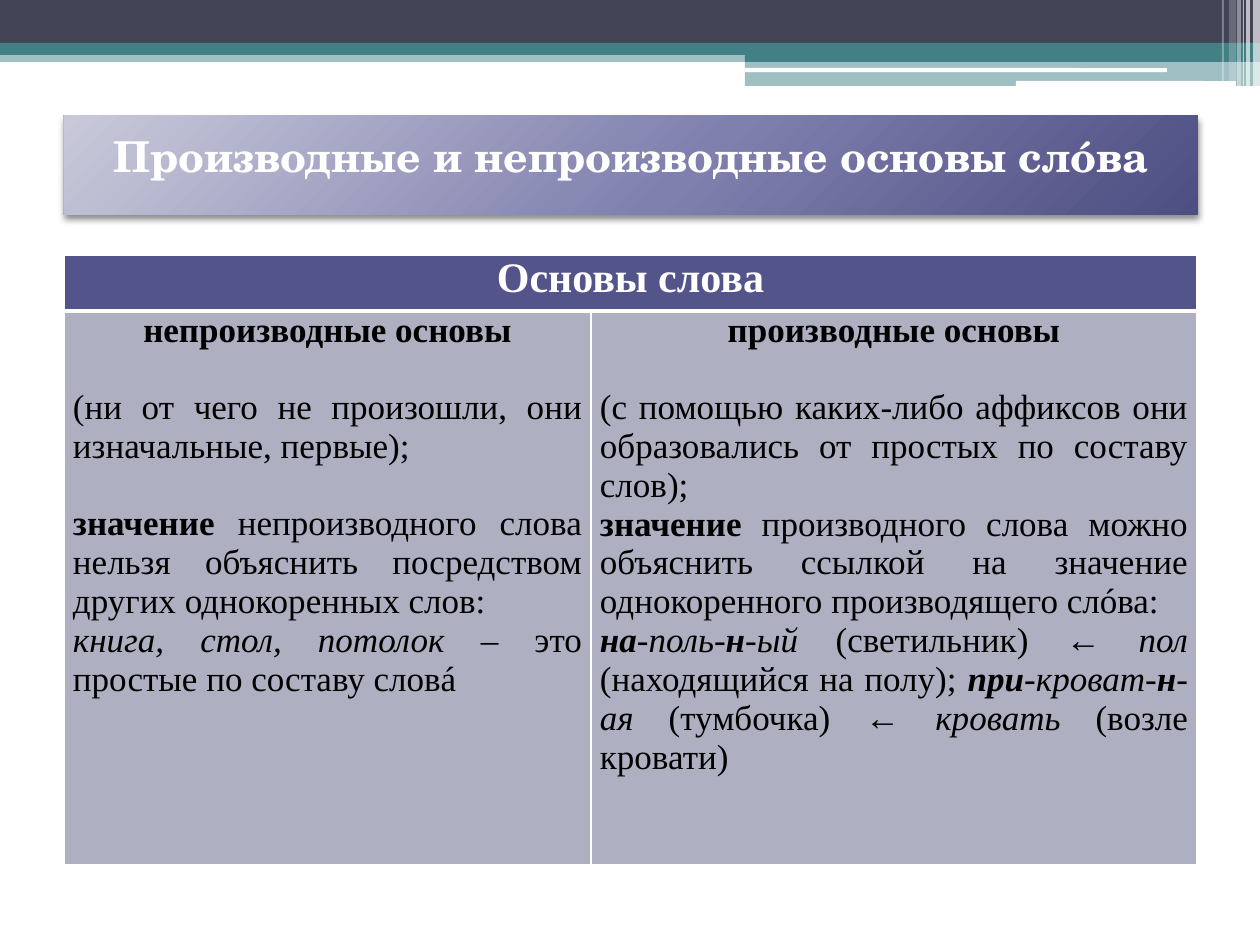
"""Builds a slide on derived and non-derived word stems."""
from dataclasses import dataclass

from lxml.etree import SubElement
from pptx import Presentation
from pptx.dml.color import RGBColor
from pptx.enum.shapes import MSO_SHAPE
from pptx.enum.text import MSO_ANCHOR, MSO_AUTO_SIZE, PP_ALIGN
from pptx.oxml import parse_xml
from pptx.oxml.ns import nsdecls, qn
from pptx.util import Pt

SCALE = 914400 / 126


@dataclass(frozen=True)
class Theme:
    dark: str = "424456"
    teal: str = "438086"
    white: str = "FFFFFF"
    black: str = "000000"
    header: str = "53548A"
    cell: str = "AEB0C1"
    title_stops: tuple = ((0, "C9C9DA"), (55, "7F80AE"), (100, "4D4E81"))
    title_font: str = "TeX Gyre Schola"
    text_font: str = "Times New Roman"
    title_size: float = 24.3
    header_size: int = 24
    text_size: int = 20
    blank_line: int = 22


THEME = Theme()
BANDS = [
    (0, 50, 1260, 12, THEME.teal, 50),
    (0, 0, 1260, 43, THEME.dark, 100),
    (0, 43, 1260, 12, THEME.teal, 100),
    (745, 49, 515, 13, THEME.teal, 100),
    (745, 61, 515, 25, THEME.teal, 50),
]
LINES = [(745, 68, 422, 4), (1016, 81, 220, 5)]
STRIPES = [
    (1253, 7, 86, 65), (1246, 4, 86, 65), (1243, 1, 86, 60),
    (1237, 4, 86, 40), (1229, 7, 81, 20), (1222, 2, 81, 30),
]
UNDERIVED = [
    ("center", True, [("непроизводные основы", "b")]),
    ("justify", True, [("(ни от чего не произошли, они изначальные, первые);", "")]),
    ("justify", False, [
        ("значение ", "b"),
        ("непроизводного слова нельзя объяснить посредством других однокоренных слов:", ""),
    ]),
    ("justify", False, [
        ("книга, стол, потолок", "i"), (" – это простые по составу словá", ""),
    ]),
]
DERIVED = [
    ("center", True, [("производные основы", "b")]),
    ("justify", False, [
        ("(с помощью каких-либо аффиксов они образовались от простых по составу слов);", ""),
    ]),
    ("justify", False, [
        ("значение", "b"),
        (" производного слова можно объяснить ссылкой на значение "
         "однокоренного производящего слóва:", ""),
    ]),
    ("justify", False, [
        ("на", "bi"), ("-поль-", "i"), ("н", "bi"), ("-ый ", "i"),
        ("(светильник) ← ", ""), ("пол ", "i"), ("(находящийся на полу); ", ""),
        ("при", "bi"), ("-кроват-", "i"), ("н", "bi"), ("-ая", "i"),
        (" (тумбочка) ← ", ""), ("кровать", "i"), (" (возле кровати)", ""),
    ]),
]


def px(length):
    """Turn pixels into EMU."""
    return round(length * SCALE)


def apply(target, values):
    """Set each named attribute on the target."""
    for name, value in values.items():
        setattr(target, name, value)


class SlideBuilder:
    """Holds the theme and the current page."""

    def __init__(self, page, theme):
        """Keep the page and its theme."""
        self.page, self.theme = page, theme

    def bar(self, left, top, width, height, color, opacity=100, kind=MSO_SHAPE.RECTANGLE):
        """Add a plain filled bar."""
        box = self.page.shapes.add_shape(kind, px(left), px(top), px(width), px(height))
        box.shadow.inherit = False
        box.fill.solid()
        box.fill.fore_color.rgb = RGBColor.from_string(color)
        box.line.fill.background()
        if opacity < 100:
            fill_color = box._element.spPr.find(qn("a:solidFill")).find(qn("a:srgbClr"))
            SubElement(fill_color, qn("a:alpha"), val=str(opacity * 1000))

    def add_spans(self, para, spans, size, color, font):
        """Add styled spans to a paragraph."""
        for text, style in spans:
            span = para.add_run()
            span.text = text
            apply(span.font, {"size": Pt(size), "name": font,
                              "bold": "b" in style, "italic": "i" in style})
            span.font.color.rgb = RGBColor.from_string(color)

    def title(self, text, left, top, width, height):
        """Fill and format the title placeholder."""
        theme, box = self.theme, self.page.shapes.title
        apply(box, {"left": px(left), "top": px(top),
                    "width": px(width), "height": px(height)})
        stops = "".join(
            f'<a:gs pos="{place * 1000}"><a:srgbClr val="{color}"/></a:gs>'
            for place, color in theme.title_stops)
        properties = box._element.spPr
        properties.append(parse_xml(
            f'<a:gradFill {nsdecls("a")} rotWithShape="1"><a:gsLst>{stops}</a:gsLst>'
            '<a:path path="circle"><a:fillToRect l="-40000" t="-90000" r="140000" b="190000"/>'
            '</a:path></a:gradFill>'))
        properties.append(parse_xml(
            f'<a:effectLst {nsdecls("a")}><a:outerShdw blurRad="{Pt(4)}" dist="{Pt(2)}" '
            f'dir="5400000" rotWithShape="0"><a:srgbClr val="{theme.black}">'
            '<a:alpha val="45000"/></a:srgbClr></a:outerShdw></a:effectLst>'))
        frame = box.text_frame
        apply(frame, {"word_wrap": True, "auto_size": MSO_AUTO_SIZE.NONE,
                      "vertical_anchor": MSO_ANCHOR.MIDDLE, "margin_left": px(12),
                      "margin_right": px(12), "margin_top": 0, "margin_bottom": px(20)})
        para = frame.paragraphs[0]
        para.alignment = PP_ALIGN.CENTER
        self.add_spans(para, [(text, "b")], theme.title_size, theme.white, theme.title_font)

    def cell(self, cell, paragraphs, fill, color, size, edges):
        """Fill a table cell with text, colour and borders."""
        theme = self.theme
        apply(cell, {"margin_left": px(9), "margin_right": px(9),
                     "margin_top": 0, "margin_bottom": 0})
        cell.fill.solid()
        cell.fill.fore_color.rgb = RGBColor.from_string(fill)
        properties = cell._tc.get_or_add_tcPr()
        for index, (side, width) in enumerate(edges.items()):
            properties.insert(index, parse_xml(
                f'<a:ln{side} {nsdecls("a")} w="{Pt(width)}"><a:solidFill>'
                f'<a:srgbClr val="{theme.white}"/></a:solidFill></a:ln{side}>'))
        frame = cell.text_frame
        aligns = {"center": PP_ALIGN.CENTER, "justify": PP_ALIGN.JUSTIFY}
        for index, (align, gap, spans) in enumerate(paragraphs):
            para = frame.add_paragraph() if index else frame.paragraphs[0]
            apply(para, {"alignment": aligns[align],
                         "space_after": Pt(theme.blank_line if gap else 0)})
            self.add_spans(para, spans, size, color, theme.text_font)

    def table(self, header, columns, left, top, widths, heights):
        """Add a table with one merged header over text columns."""
        theme = self.theme
        table = self.page.shapes.add_table(
            len(heights), len(widths), px(left), px(top),
            px(sum(widths)), px(sum(heights))).table
        table.horz_banding = False
        for column, width in zip(table.columns, widths):
            column.width = px(width)
        for row, height in zip(table.rows, heights):
            row.height = px(height)
        table.cell(0, 0).merge(table.cell(0, len(widths) - 1))
        self.cell(table.cell(0, 0), [("center", False, [(header, "b")])], theme.header,
                  theme.white, theme.header_size, {"L": 1, "R": 1, "T": 1, "B": 3})
        for index, paragraphs in enumerate(columns):
            self.cell(table.cell(1, index), paragraphs, theme.cell, theme.black,
                      theme.text_size, {"L": 1, "R": 1, "T": 3, "B": 1})


def main():
    """Build and save the deck."""
    deck = Presentation()
    apply(deck, {"slide_width": px(1260), "slide_height": px(945)})
    builder = SlideBuilder(deck.slides.add_slide(deck.slide_layouts[5]), THEME)
    for band in BANDS:
        builder.bar(*band)
    for line in LINES:
        builder.bar(*line, THEME.white, kind=MSO_SHAPE.ROUNDED_RECTANGLE)
    for left, width, height, opacity in STRIPES:
        builder.bar(left, 0, width, height, THEME.white, opacity)
    builder.title("Производные и непроизводные основы слóва", 64, 116, 1134, 99)
    builder.table("Основы слова", [UNDERIVED, DERIVED], 64, 255, [527, 606], [56, 554])
    deck.save("out.pptx")


if __name__ == "__main__":
    main()
